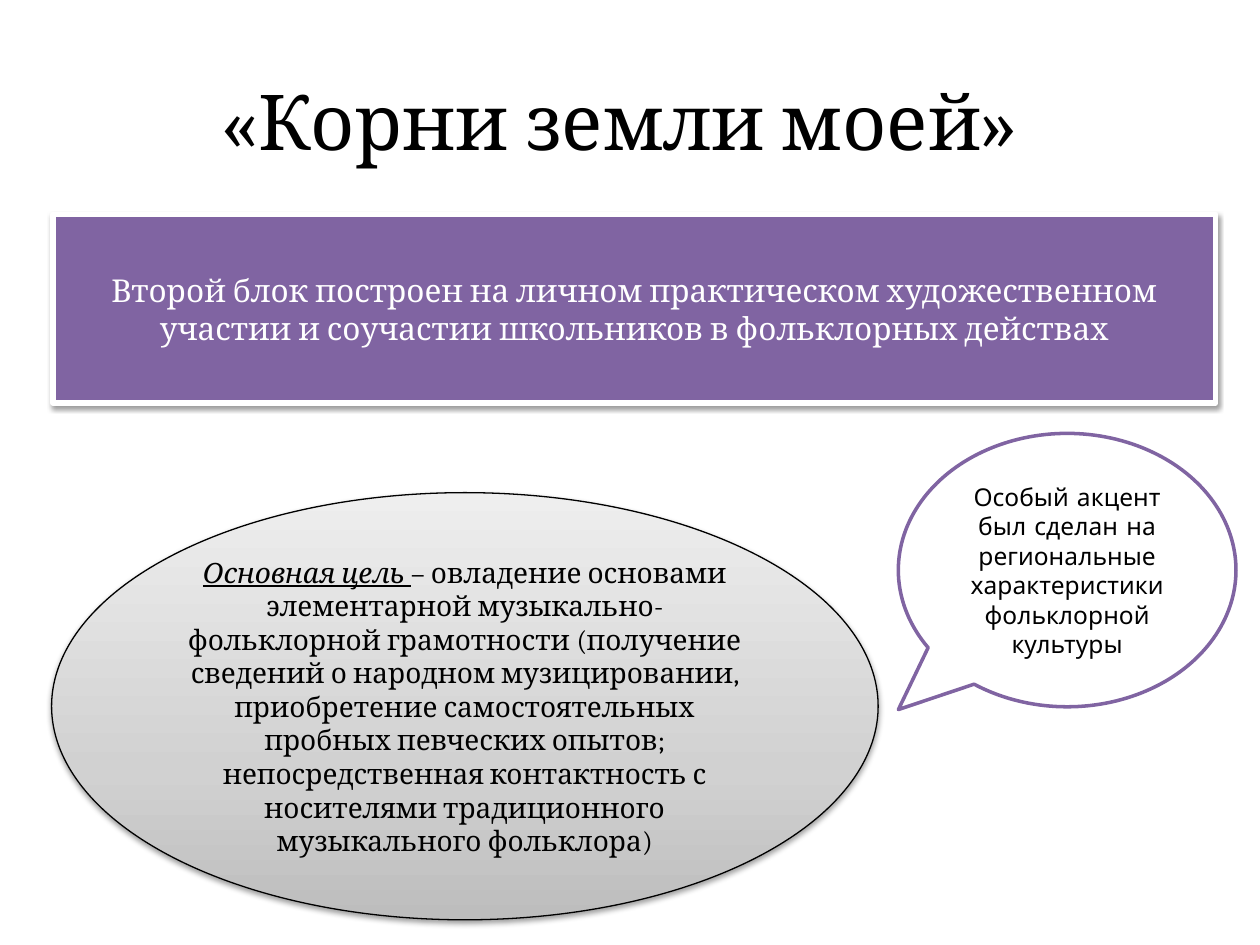
from copy import deepcopy

from lxml import etree
from pptx import Presentation
from pptx import util as u
from pptx.dml.color import RGBColor
from pptx.enum import shapes, text
from pptx.oxml import ns

SERIF, COMIC = "Cambria", "Comic Neue"
BLACK, WHITE, PURPLE = "000000", "FFFFFF", "8064A2"
SILVER = [(0, "BDBDBD"), (0.35, "D1D1D1"), (1, "EEEEEE")]


def rgb(value):
    return RGBColor.from_string(value)


class Deck:
    """Holds the style and the current slide; boxes are in inches on a 10 x 7.5 grid."""

    def __init__(self, prs):
        self.cell_w, self.cell_h = prs.slide_width / 10, prs.slide_height / 7.5
        self.slide = prs.slides.add_slide(prs.slide_layouts[5])

    def box(self, x, y, w, h):
        return [int(x * self.cell_w), int(y * self.cell_h),
                int(w * self.cell_w), int(h * self.cell_h)]

    def set_text(self, sp, runs, size, font, color):
        tf = sp.text_frame
        tf.word_wrap = True
        tf.vertical_anchor = text.MSO_ANCHOR.MIDDLE
        p = tf.paragraphs[0]
        p.alignment = text.PP_ALIGN.CENTER
        p.font.size, p.font.name = u.Pt(size), font
        p.font.color.rgb = rgb(color)
        for words, emphasis in runs:
            r = p.add_run()
            r.text = words
            if emphasis:
                r.font.italic = r.font.underline = True

    def title(self, box, words):
        sp = self.slide.shapes.title
        sp.left, sp.top, sp.width, sp.height = self.box(*box)
        self.set_text(sp, [(words, False)], 44, SERIF, BLACK)

    def shape(self, kind, box, runs, size, font, color, fill, line, width, shadow=False):
        sp = self.slide.shapes.add_shape(kind, *self.box(*box))
        sp.shadow.inherit = False
        if isinstance(fill, list):
            self.gradient(sp, fill)
        else:
            sp.fill.solid()
            sp.fill.fore_color.rgb = rgb(fill)
        sp.line.color.rgb = rgb(line)
        sp.line.width = u.Pt(width)
        if shadow:
            self.drop_shadow(sp)
        self.set_text(sp, runs, size, font, color)
        return sp

    def gradient(self, sp, stops):
        sp.fill.gradient()
        sp.fill.gradient_angle = 90
        stop_list = sp.element.spPr.find(".//" + ns.qn("a:gsLst"))
        while len(stop_list) < len(stops):
            stop_list.append(deepcopy(stop_list[0]))
        for stop, (position, color) in zip(sp.fill.gradient_stops, stops):
            stop.position = position
            stop.color.rgb = rgb(color)

    def drop_shadow(self, sp):
        effects = sp.element.spPr.find(ns.qn("a:effectLst"))
        outer = etree.SubElement(effects, ns.qn("a:outerShdw"), blurRad=str(u.Pt(3.1)),
                                 dist=str(u.Pt(1.6)), dir="5400000", rotWithShape="0")
        color = etree.SubElement(outer, ns.qn("a:srgbClr"), val=BLACK)
        etree.SubElement(color, ns.qn("a:alpha"), val="38000")


def main():
    prs = Presentation()
    prs.slide_width, prs.slide_height = u.Inches(10), u.Inches(7.5)
    deck = Deck(prs)
    kinds = shapes.MSO_SHAPE

    # Title
    deck.title((0.42, 0.44, 9, 1.02), "«Корни земли моей»")

    # Banner about the second block
    deck.shape(kinds.RECTANGLE, (0.42, 1.7, 9.23, 1.5),
               [("Второй блок построен на личном практическом художественном участии "
                 "и соучастии школьников в фольклорных действах", False)],
               18, SERIF, WHITE, PURPLE, WHITE, 3, shadow=True)

    # Main goal
    deck.shape(kinds.OVAL, (0.41, 3.91, 6.56, 3.39),
               [("Основная цель ", True),
                ("– овладение основами элементарной музыкально-фольклорной грамотности "
                 "(получение сведений о народном музицировании, приобретение "
                 "самостоятельных пробных певческих опытов; непосредственная "
                 "контактность с носителями традиционного музыкального фольклора)", False)],
               16, SERIF, BLACK, SILVER, BLACK, 0.75, shadow=True)

    # Callout on regional character
    callout = deck.shape(kinds.OVAL_CALLOUT, (7.13, 3.44, 2.68, 2.17),
                         [("Особый акцент был сделан на региональные характеристики "
                           "фольклорной культуры", False)],
                         14, COMIC, BLACK, WHITE, PURPLE, 2)
    callout.adjustments[0], callout.adjustments[1] = -0.5, 0.51

    prs.save("out.pptx")


if __name__ == "__main__":
    main()
